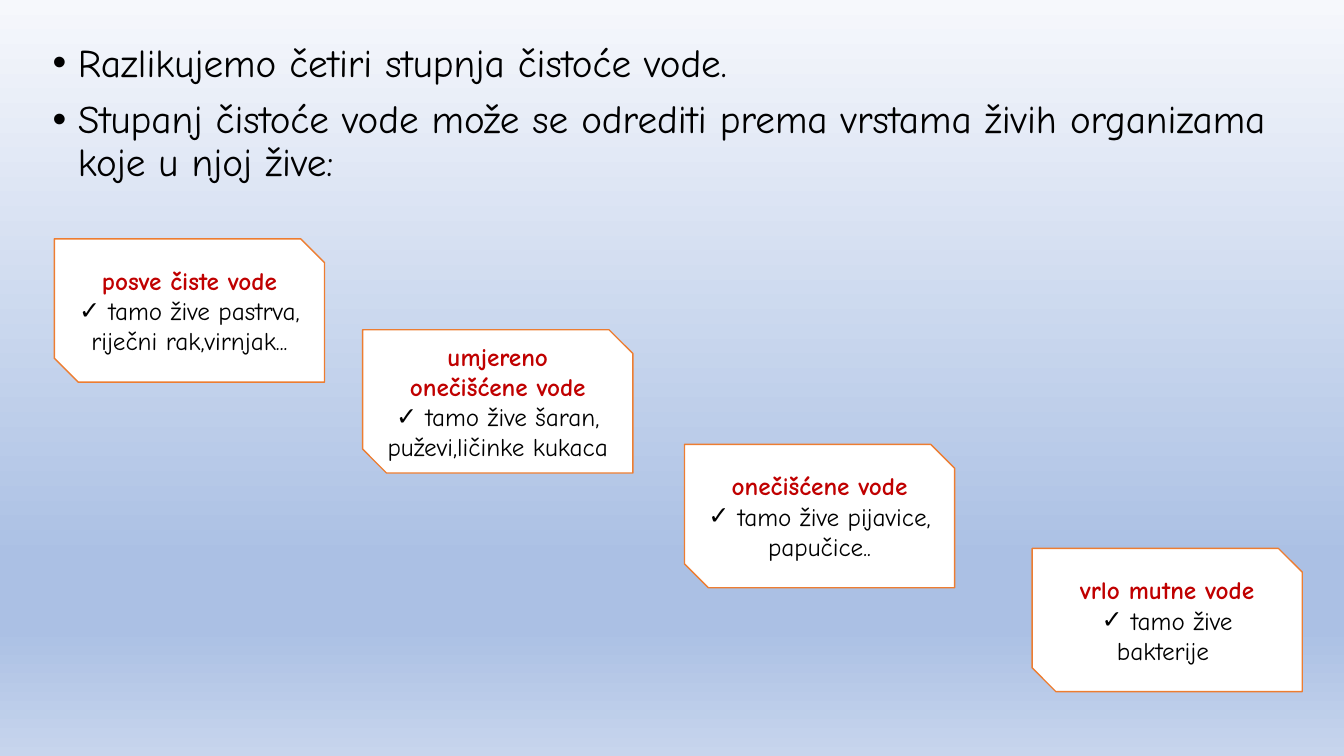
import dataclasses

import lxml.etree
import pptx
import pptx.dml.color
import pptx.enum.shapes
import pptx.enum.text
import pptx.oxml.ns
import pptx.util

Cm = pptx.util.Cm
Pt = pptx.util.Pt
qn = pptx.oxml.ns.qn


@dataclasses.dataclass(frozen=True)
class Theme:
    font: str = "Comic Neue"
    text: str = "000000"
    heading: str = "C00000"
    card_fill: str = "FFFFFF"
    card_line: str = "ED7D31"
    body_size: int = 28
    card_size: int = 18
    # Sky: (position in percent, colour), top to bottom
    sky: tuple = ((0, "F6F8FC"), (74, "ABC0E4"), (83, "ABC0E4"), (100, "C7D5ED"))


def rgb(colour):
    return pptx.dml.color.RGBColor.from_string(colour)


class SlideBuilder:
    def __init__(self, page, theme):
        self.page = page
        self.theme = theme

    def background(self):
        fill = self.page.background.fill
        fill.gradient()
        fill.gradient_angle = 270
        stops = self.page._element.find(".//" + qn("a:gsLst"))
        for stop in list(stops):
            stops.remove(stop)
        for position, colour in self.theme.sky:
            stop = lxml.etree.SubElement(stops, qn("a:gs"), pos=str(position * 1000))
            lxml.etree.SubElement(stop, qn("a:srgbClr"), val=colour)

    def format_para(self, para, size, colour, bold=False):
        for span in para.runs:
            span.font.name = self.theme.font
            span.font.size = Pt(size)
            span.font.bold = bold
            span.font.color.rgb = rgb(colour)

    def bullet(self, para, symbol, indent):
        properties = para._p.get_or_add_pPr()
        properties.set("marL", str(indent))
        properties.set("indent", str(-indent))
        lxml.etree.SubElement(properties, qn("a:buFont"), typeface="Arial")
        lxml.etree.SubElement(properties, qn("a:buChar"), char=symbol)

    def body(self, lines, left, top, width, height):
        box = self.page.placeholders[1]
        box.left, box.top, box.width, box.height = left, top, width, height
        box.text_frame.text = "\n".join(lines)
        for para in box.text_frame.paragraphs:
            para.line_spacing = 0.9
            para.space_before = Pt(10)
            self.bullet(para, "•", Cm(0.64))
            self.format_para(para, self.theme.body_size, self.theme.text)

    def card(self, heading, detail, left, top, width, height):
        box = self.page.shapes.add_shape(
            pptx.enum.shapes.MSO_SHAPE.SNIP_2_DIAG_RECTANGLE, left, top, width, height)
        box.shadow.inherit = False
        box.fill.solid()
        box.fill.fore_color.rgb = rgb(self.theme.card_fill)
        box.line.color.rgb = rgb(self.theme.card_line)
        box.line.width = Pt(1)
        frame = box.text_frame
        frame.word_wrap = True
        frame.vertical_anchor = pptx.enum.text.MSO_ANCHOR.MIDDLE
        frame.text = heading + "\n" + detail
        for para in frame.paragraphs:
            para.alignment = pptx.enum.text.PP_ALIGN.CENTER
        title, description = frame.paragraphs
        self.format_para(title, self.theme.card_size, self.theme.heading, bold=True)
        self.bullet(description, "✓", Cm(0))
        self.format_para(description, self.theme.card_size, self.theme.text)


def main():
    deck = pptx.Presentation()
    deck.slide_width, deck.slide_height = Cm(33.87), Cm(19.05)
    page = deck.slides.add_slide(deck.slide_layouts[1])
    title = page.shapes.title._element
    title.getparent().remove(title)

    builder = SlideBuilder(page, Theme())
    builder.background()

    # Introduction
    builder.body(
        ["Razlikujemo četiri stupnja čistoće vode.",
         "Stupanj čistoće vode može se odrediti prema vrstama živih organizama "
         "koje u njoj žive:"],
        Cm(1.07), Cm(0.97), Cm(32.13), Cm(17.42))

    # Four degrees of purity, stepping down from clean to murky
    degrees = [
        ("posve čiste vode", " tamo žive pastrva, riječni rak,virnjak...", 1.37, 6.02),
        ("umjereno onečišćene vode", " tamo žive šaran, puževi,ličinke kukaca", 9.14, 8.31),
        ("onečišćene vode", " tamo žive pijavice, papučice..", 17.25, 11.2),
        ("vrlo mutne vode", " tamo žive bakterije ", 26.01, 13.82),
    ]
    for heading, detail, left, top in degrees:
        builder.card(heading, detail, Cm(left), Cm(top), Cm(6.81), Cm(3.61))

    deck.save("out.pptx")


if __name__ == "__main__":
    main()
